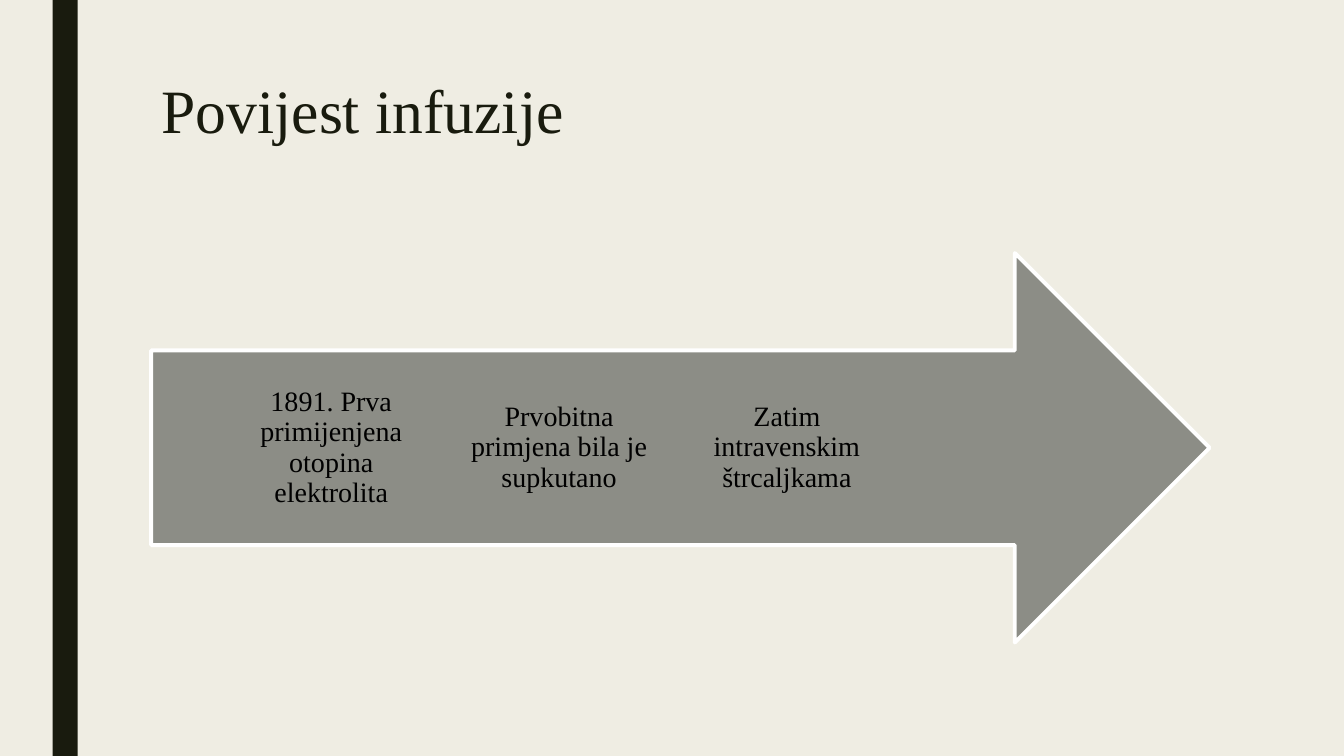
from dataclasses import dataclass

from pptx import Presentation
from pptx.dml.color import RGBColor
from pptx.enum.shapes import MSO_SHAPE
from pptx.enum.text import MSO_ANCHOR, PP_ALIGN
from pptx.slide import Slide
from pptx.text.text import TextFrame
from pptx.util import Emu, Pt

PX = 9525  # EMU in one px, 96 px to the inch
FONT = "Times New Roman"
CREAM = RGBColor(0xEF, 0xED, 0xE3)
DARK = RGBColor(0x19, 0x1B, 0x0E)
GREY = RGBColor(0x8C, 0x8D, 0x86)
WHITE = RGBColor(0xFF, 0xFF, 0xFF)
BLACK = RGBColor(0x00, 0x00, 0x00)


@dataclass(frozen=True)
class Box:
    left: int
    top: int
    width: int
    height: int

    def emu(self) -> tuple[Emu, Emu, Emu, Emu]:
        sides = (self.left, self.top, self.width, self.height)
        return tuple(Emu(side * PX) for side in sides)


PAGE = Box(0, 0, 1280, 720)
BAR = Box(50, 0, 24, 720)
TITLE = Box(144, 72, 477, 86)
ARROW = Box(144, 241, 1008, 371)
STEP = Box(225, 334, 181, 185)
PITCH = 217
STEPS = (
    "1891. Prva primijenjena otopina elektrolita",
    "Prvobitna primjena bila je supkutano",
    "Zatim intravenskim štrcaljkama",
)


def write(frame: TextFrame, text: str, *, size: int, color: RGBColor,
          align: PP_ALIGN, anchor: MSO_ANCHOR, lines: float,
          inset: tuple[int, int]) -> None:
    """Fill a frame with one paragraph; inset is (sides, top and bottom)."""
    frame.word_wrap = True
    frame.vertical_anchor = anchor
    frame.margin_left = frame.margin_right = Emu(inset[0] * PX)
    frame.margin_top = frame.margin_bottom = Emu(inset[1] * PX)
    para = frame.paragraphs[0]
    para.alignment = align
    para.line_spacing = lines
    run = para.add_run()
    run.text = text
    run.font.name = FONT
    run.font.size = Pt(size)
    run.font.color.rgb = color


def draw(slide: Slide, kind: MSO_SHAPE, box: Box, fill: RGBColor,
         line: RGBColor | None = None, weight: float = 0) -> None:
    shape = slide.shapes.add_shape(kind, *box.emu())
    shape.shadow.inherit = False
    shape.fill.solid()
    shape.fill.fore_color.rgb = fill
    if line is None:
        shape.line.fill.background()
    else:
        shape.line.color.rgb = line
        shape.line.width = Pt(weight)


def main() -> None:
    deck = Presentation()
    deck.slide_width, deck.slide_height = PAGE.emu()[2:]
    slide = deck.slides.add_slide(deck.slide_layouts[5])
    slide.background.fill.solid()
    slide.background.fill.fore_color.rgb = CREAM

    draw(slide, MSO_SHAPE.RECTANGLE, BAR, DARK)

    title = slide.shapes.title
    title.left, title.top, title.width, title.height = TITLE.emu()
    write(title.text_frame, "Povijest infuzije", size=44, color=DARK,
          align=PP_ALIGN.LEFT, anchor=MSO_ANCHOR.TOP, lines=0.89,
          inset=(10, 5))

    draw(slide, MSO_SHAPE.RIGHT_ARROW, ARROW, GREY, WHITE, 2.75)
    for i, text in enumerate(STEPS):
        box = Box(STEP.left + i * PITCH, STEP.top, STEP.width, STEP.height)
        label = slide.shapes.add_textbox(*box.emu())
        write(label.text_frame, text, size=20, color=BLACK,
              align=PP_ALIGN.CENTER, anchor=MSO_ANCHOR.MIDDLE, lines=0.9,
              inset=(0, 21))

    deck.save("out.pptx")


if __name__ == "__main__":
    main()
